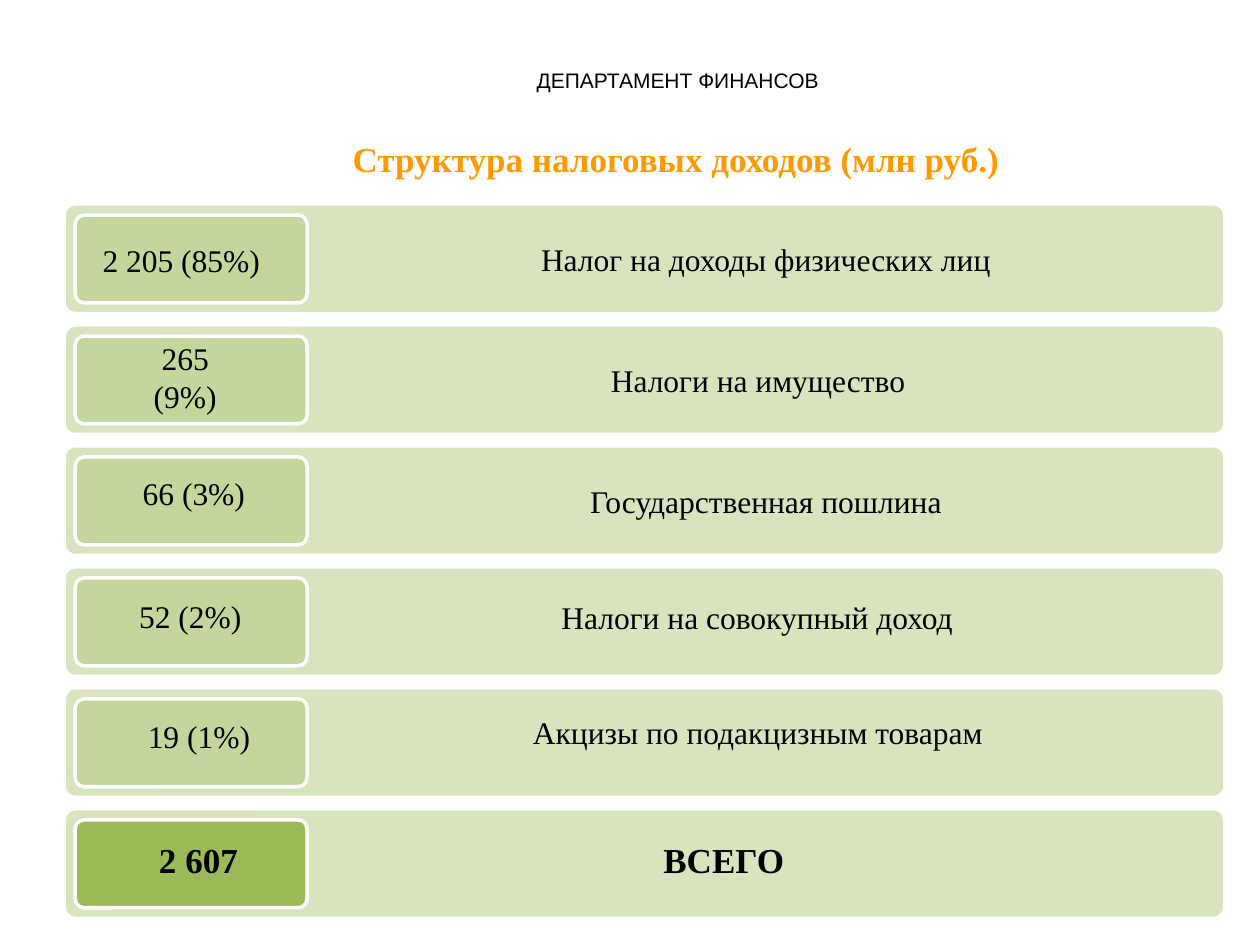
from dataclasses import dataclass

from pptx import Presentation
from pptx.dml.color import RGBColor
from pptx.enum.shapes import MSO_SHAPE
from pptx.enum.text import MSO_ANCHOR, PP_ALIGN
from pptx.util import Pt

ROUNDED = MSO_SHAPE.ROUNDED_RECTANGLE
MIDDLE = MSO_ANCHOR.MIDDLE
LEFT, CENTER = PP_ALIGN.LEFT, PP_ALIGN.CENTER


@dataclass(frozen=True)
class Theme:
    text: str = "000000"
    title: str = "FF9900"
    band: str = "D7E4BD"
    badge: str = "C3D69B"
    total: str = "9BBB59"
    line: str = "FFFFFF"
    sans: str = "Arial"
    serif: str = "Times New Roman"
    small: int = 12
    body: int = 18
    large: int = 20


@dataclass(frozen=True)
class Row:
    value: str
    value_box: tuple
    label: str
    label_box: tuple
    total: bool = False


THEME = Theme()
FULL_LABEL = (139, 0, 524, 62.6)
ROWS = [
    Row("2 205 (85%)", (14.4, 17.3, 105, 28.8), "Налог на доходы физических лиц", FULL_LABEL),
    Row("265 (9%)", (28.8, 15.1, 80.6, 28.8), "Налоги на имущество", (134.5, 0, 524, 62.6)),
    Row("66 (3%)", (37.4, 12.2, 73.4, 28.8), "Государственная пошлина", FULL_LABEL),
    Row("52 (2%)", (35.3, 13.7, 73.4, 28.8), "Налоги на совокупный доход", (275.8, 14.4, 240.5, 28.8)),
    Row("19 (1%)", (40.3, 12.9, 73.4, 28.8), "Акцизы по подакцизным товарам", (259.2, 10.8, 274.3, 28.8)),
    Row("2 607", (46.8, 13, 59.8, 31.7), "ВСЕГО", (334.8, 13, 84.2, 31.7), True),
]
ROW_PITCH, ROW_HEIGHT = 69.12, 62.6


def add_text(s, text, box, size, font=THEME.serif, color=THEME.text, bold=False,
             align=CENTER, wrap=False):
    tf = s.shapes.add_textbox(*map(Pt, box)).text_frame
    tf.word_wrap = wrap
    tf.vertical_anchor = MIDDLE
    p = tf.paragraphs[0]
    p.text = text
    p.alignment = align
    r = p.runs[0]
    r.font.name = font
    r.font.size = Pt(size)
    r.font.bold = bold
    r.font.color.rgb = RGBColor.from_string(color)


def add_panel(s, box, fill):
    sp = s.shapes.add_shape(ROUNDED, *map(Pt, box))
    sp.shadow.inherit = False
    sp.adjustments[0] = 0.1
    sp.fill.solid()
    sp.fill.fore_color.rgb = RGBColor.from_string(fill)
    sp.line.color.rgb = RGBColor.from_string(THEME.line)
    sp.line.width = Pt(2)


def add_header(s, box):
    left, top, width, height = box
    add_text(s, "ДЕПАРТАМЕНТ ФИНАНСОВ", (left, top, width, 21.6),
             THEME.small, font=THEME.sans, wrap=True)
    add_text(s, "Структура налоговых доходов (млн руб.)",
             (left + 130.4, top + height - 31.7, 484.6, 31.7),
             THEME.large, color=THEME.title, bold=True, align=LEFT, wrap=True)


def add_row(s, row, box):
    left, top, width, height = box
    add_panel(s, box, THEME.band)
    add_panel(s, (left + 6.3, top + 6.3, 132.5, height - 12.4),
              THEME.total if row.total else THEME.badge)
    size = THEME.large if row.total else THEME.body
    for text, (dx, dy, w, h) in ((row.value, row.value_box), (row.label, row.label_box)):
        add_text(s, text, (left + dx, top + dy, w, h), size, bold=row.total)


def add_rows(s, box):
    left, top, width = box
    for i, row in enumerate(ROWS):
        add_row(s, row, (left, top + i * ROW_PITCH, width, ROW_HEIGHT))


def main():
    prs = Presentation()
    prs.slide_width, prs.slide_height = Pt(720), Pt(540)
    s = prs.slides.add_slide(prs.slide_layouts[6])
    add_header(s, (64, 35.3, 646.6, 71.3))
    add_rows(s, (36.7, 116.6, 663.1))
    prs.save("out.pptx")


if __name__ == "__main__":
    main()
